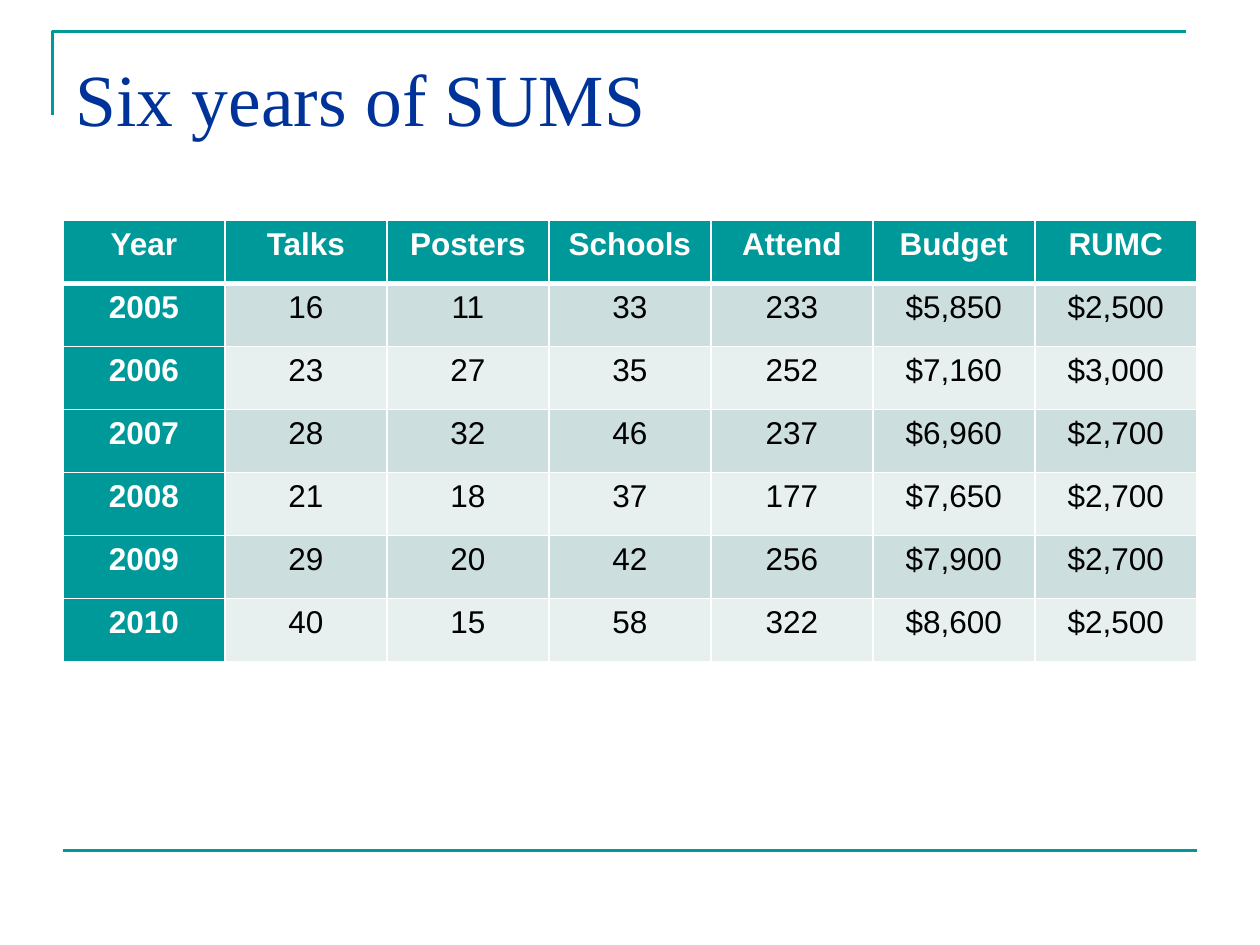
from lxml.etree import SubElement
from pptx import Presentation
from pptx.dml.color import RGBColor
from pptx.enum.shapes import MSO_CONNECTOR
from pptx.enum.text import MSO_ANCHOR, MSO_AUTO_SIZE, PP_ALIGN
from pptx.oxml import parse_xml
from pptx.oxml.ns import nsdecls, qn
from pptx.util import Pt

# Content
TITLE = "Six years of SUMS"
HEADINGS = ("Year", "Talks", "Posters", "Schools", "Attend", "Budget", "RUMC")
YEARS = [
    ("2005", "16", "11", "33", "233", "$5,850", "$2,500"),
    ("2006", "23", "27", "35", "252", "$7,160", "$3,000"),
    ("2007", "28", "32", "46", "237", "$6,960", "$2,700"),
    ("2008", "21", "18", "37", "177", "$7,650", "$2,700"),
    ("2009", "29", "20", "42", "256", "$7,900", "$2,700"),
    ("2010", "40", "15", "58", "322", "$8,600", "$2,500"),
]

# Colours
TEAL = RGBColor(0x00, 0x99, 0x99)
NAVY = RGBColor(0x00, 0x33, 0x99)
WHITE = RGBColor(0xFF, 0xFF, 0xFF)
BLACK = RGBColor(0x00, 0x00, 0x00)
BANDS = (RGBColor(0xCC, 0xDE, 0xDE), RGBColor(0xE7, 0xEF, 0xEF))

# Layout
LEFT, WIDTH = Pt(36), Pt(648)
TITLE_BOX = {"left": LEFT, "top": Pt(21.6), "width": WIDTH, "height": Pt(90)}
TITLE_FRAME = {"word_wrap": True, "auto_size": MSO_AUTO_SIZE.NONE,
               "vertical_anchor": MSO_ANCHOR.TOP, "margin_top": Pt(8.5)}
TITLE_FONT = {"name": "Times New Roman", "size": Pt(42), "bold": False}
CELL_FONT = {"name": "Arial", "size": Pt(18)}
TABLE_TOP, ROW_HEIGHT = Pt(126), Pt(36)
CORNER = [(Pt(30), Pt(66)), (Pt(30), Pt(18)), (Pt(678), Pt(18))]
FOOT_Y = Pt(486)


def apply(target, values):
    for key, value in values.items():
        setattr(target, key, value)


def style_rule(rule):
    rule.line.color.rgb = TEAL
    rule.line.width = Pt(1.5)


def add_borders(cell, widths):
    properties = cell._tc.get_or_add_tcPr()
    for position, (side, width) in enumerate(widths.items()):
        border = parse_xml(f'<a:ln{side} {nsdecls("a")} w="{Pt(width)}"><a:solidFill>'
                           f'<a:srgbClr val="{WHITE}"/></a:solidFill></a:ln{side}>')
        properties.insert(position, border)


def add_rules(slide):
    builder = slide.shapes.build_freeform(*CORNER[0], scale=1.0)
    builder.add_line_segments(CORNER[1:], close=False)
    corner = builder.convert_to_shape()
    corner.shadow.inherit = False
    corner.fill.background()
    foot = slide.shapes.add_connector(MSO_CONNECTOR.STRAIGHT, LEFT, FOOT_Y, LEFT + WIDTH, FOOT_Y)
    for rule in (corner, foot):
        style_rule(rule)
    SubElement(foot._element.spPr, qn("a:effectLst"))


def add_title(slide):
    title = slide.shapes.title
    apply(title, TITLE_BOX)
    apply(title.text_frame, TITLE_FRAME)
    title.text_frame.text = TITLE
    paragraph = title.text_frame.paragraphs[0]
    paragraph.alignment = PP_ALIGN.LEFT
    apply(paragraph.font, TITLE_FONT)
    paragraph.font.color.rgb = NAVY


def add_year_table(slide):
    rows = [HEADINGS, *YEARS]
    table = slide.shapes.add_table(len(rows), len(HEADINGS), LEFT, TABLE_TOP,
                                   WIDTH, ROW_HEIGHT * len(rows)).table
    for r, row in enumerate(rows):
        table.rows[r].height = ROW_HEIGHT
        for c, value in enumerate(row):
            cell = table.cell(r, c)
            is_heading = r == 0 or c == 0
            cell.fill.solid()
            cell.fill.fore_color.rgb = TEAL if is_heading else BANDS[(r - 1) % 2]
            add_borders(cell, {"L": 1, "R": 1, "T": 3 if r == 1 else 1, "B": 3 if r == 0 else 1})
            cell.text = value
            paragraph = cell.text_frame.paragraphs[0]
            paragraph.alignment = PP_ALIGN.CENTER
            apply(paragraph.font, CELL_FONT | {"bold": is_heading})
            paragraph.font.color.rgb = WHITE if is_heading else BLACK


def main():
    deck = Presentation()
    deck.slide_width, deck.slide_height = Pt(720), Pt(540)
    slide = deck.slides.add_slide(deck.slide_layouts[5])  # title only
    add_rules(slide)
    add_title(slide)
    add_year_table(slide)
    deck.save("out.pptx")


if __name__ == "__main__":
    main()
